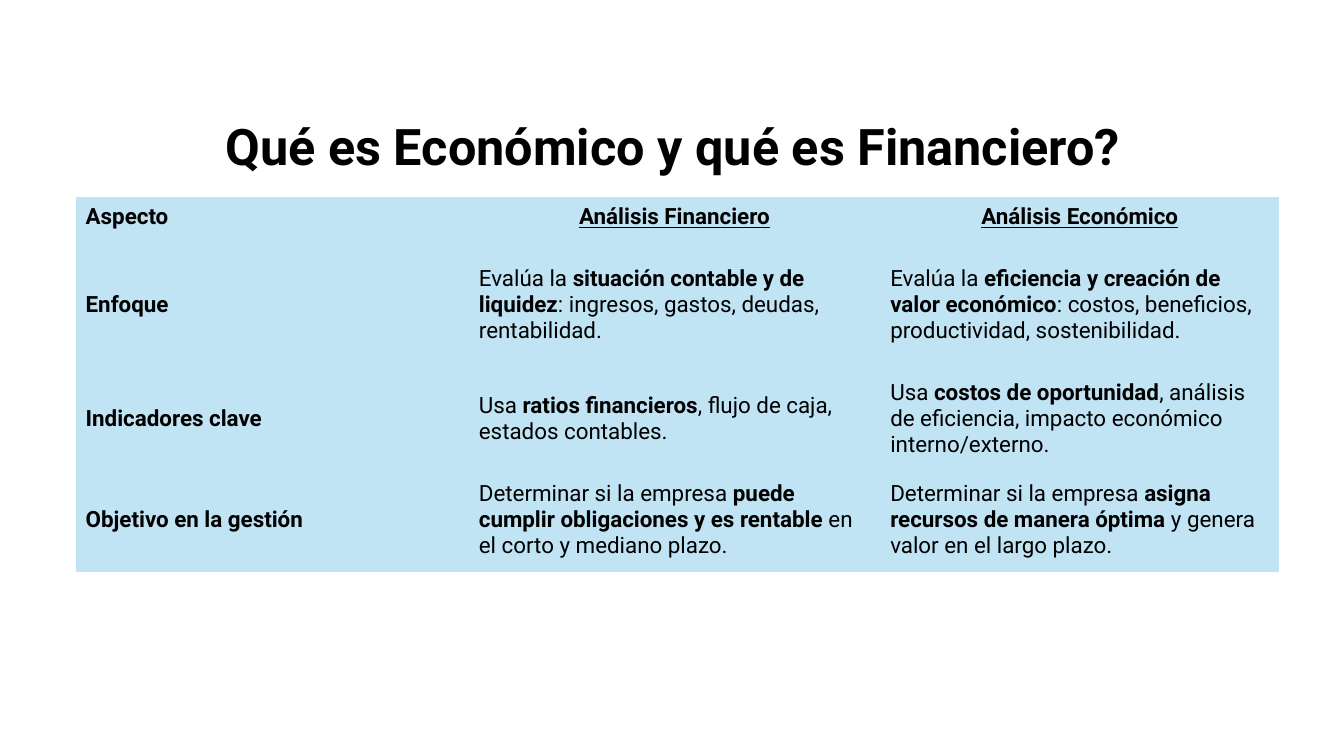
from dataclasses import dataclass

from pptx import Presentation
from pptx.dml.color import RGBColor
from pptx.enum.text import MSO_ANCHOR as Anchor, PP_ALIGN as Align
from pptx.slide import Slide
from pptx.table import _Cell as Cell
from pptx.text.text import _Paragraph as Paragraph
from pptx.util import Inches, Pt

FONT = "Roboto"
BLACK = "000000"
LIGHT_BLUE = "C1E4F5"
COLUMN_WIDTHS = (3.9, 4.08, 3.96)
ROW_HEIGHTS = (0.46, 1.27, 1, 1)
HEADERS = ("Aspecto", "Análisis Financiero", "Análisis Económico")


@dataclass(frozen=True)
class Description:
    opening: str
    key_phrase: str
    ending: str


@dataclass(frozen=True)
class Aspect:
    name: str
    financial: Description
    economic: Description


ASPECTS = (
    Aspect(
        "Enfoque",
        Description("Evalúa la ", "situación contable y de liquidez",
                    ": ingresos, gastos, deudas, rentabilidad."),
        Description("Evalúa la ", "eficiencia y creación de valor económico",
                    ": costos, beneficios, productividad, sostenibilidad."),
    ),
    Aspect(
        "Indicadores clave",
        Description("Usa ", "ratios financieros",
                    ", flujo de caja, estados contables."),
        Description("Usa ", "costos de oportunidad",
                    ", análisis de eficiencia, impacto económico interno/externo."),
    ),
    Aspect(
        "Objetivo en la gestión",
        Description("Determinar si la empresa ",
                    "puede cumplir obligaciones y es rentable",
                    " en el corto y mediano plazo."),
        Description("Determinar si la empresa ",
                    "asigna recursos de manera óptima",
                    " y genera valor en el largo plazo."),
    ),
)


def color(value: str) -> RGBColor:
    return RGBColor.from_string(value)


def add_run(paragraph: Paragraph, text: str, size: float, bold: bool,
            underline: bool = False) -> None:
    run = paragraph.add_run()
    run.text = text
    run.font.name = FONT
    run.font.size = Pt(size)
    run.font.bold = bold
    run.font.underline = underline
    run.font.color.rgb = color(BLACK)


def add_title(slide: Slide, text: str) -> None:
    box = slide.shapes.add_textbox(Inches(0.75), Inches(0.8),
                                   Inches(11.85), Inches(1.35))
    frame = box.text_frame
    frame.word_wrap = True
    frame.vertical_anchor = Anchor.MIDDLE
    paragraph = frame.paragraphs[0]
    paragraph.alignment = Align.CENTER
    paragraph.line_spacing = 0.9
    add_run(paragraph, text, 36, bold=True)


def format_cell(cell: Cell) -> None:
    cell.fill.solid()
    cell.fill.fore_color.rgb = color(LIGHT_BLUE)
    cell.vertical_anchor = Anchor.MIDDLE
    cell.margin_left = cell.margin_right = cell.margin_bottom = Inches(0.1)
    cell.margin_top = Inches(0.05)


def write_description(cell: Cell, description: Description) -> None:
    paragraph = cell.text_frame.paragraphs[0]
    add_run(paragraph, description.opening, 16, bold=False)
    add_run(paragraph, description.key_phrase, 16, bold=True)
    add_run(paragraph, description.ending, 16, bold=False)


def add_comparison(slide: Slide) -> None:
    table = slide.shapes.add_table(
        len(ROW_HEIGHTS), len(COLUMN_WIDTHS), Inches(0.75), Inches(1.95),
        Inches(sum(COLUMN_WIDTHS)), Inches(sum(ROW_HEIGHTS))).table
    table.first_row = table.horz_banding = False
    for column, width in zip(table.columns, COLUMN_WIDTHS):
        column.width = Inches(width)
    for row, height in zip(table.rows, ROW_HEIGHTS):
        row.height = Inches(height)
    for cell in table.iter_cells():
        format_cell(cell)
    # The default style draws white grid lines; use "No Style, No Grid".
    style = table._tbl.tblPr.find("{*}tableStyleId")
    style.text = "{2D5ABB26-0587-4C30-8999-92F81FD0307C}"

    for index, header in enumerate(HEADERS):
        paragraph = table.cell(0, index).text_frame.paragraphs[0]
        paragraph.alignment = Align.CENTER if index else Align.LEFT
        add_run(paragraph, header, 16, bold=True, underline=index > 0)
    for index, aspect in enumerate(ASPECTS, start=1):
        add_run(table.cell(index, 0).text_frame.paragraphs[0],
                aspect.name, 16, bold=True)
        write_description(table.cell(index, 1), aspect.financial)
        write_description(table.cell(index, 2), aspect.economic)


def main() -> None:
    presentation = Presentation()
    presentation.slide_width = Inches(13.33)
    presentation.slide_height = Inches(7.5)
    slide = presentation.slides.add_slide(presentation.slide_layouts[6])
    add_title(slide, "Qué es Económico y qué es Financiero?")
    add_comparison(slide)
    presentation.save("out.pptx")


if __name__ == "__main__":
    main()
